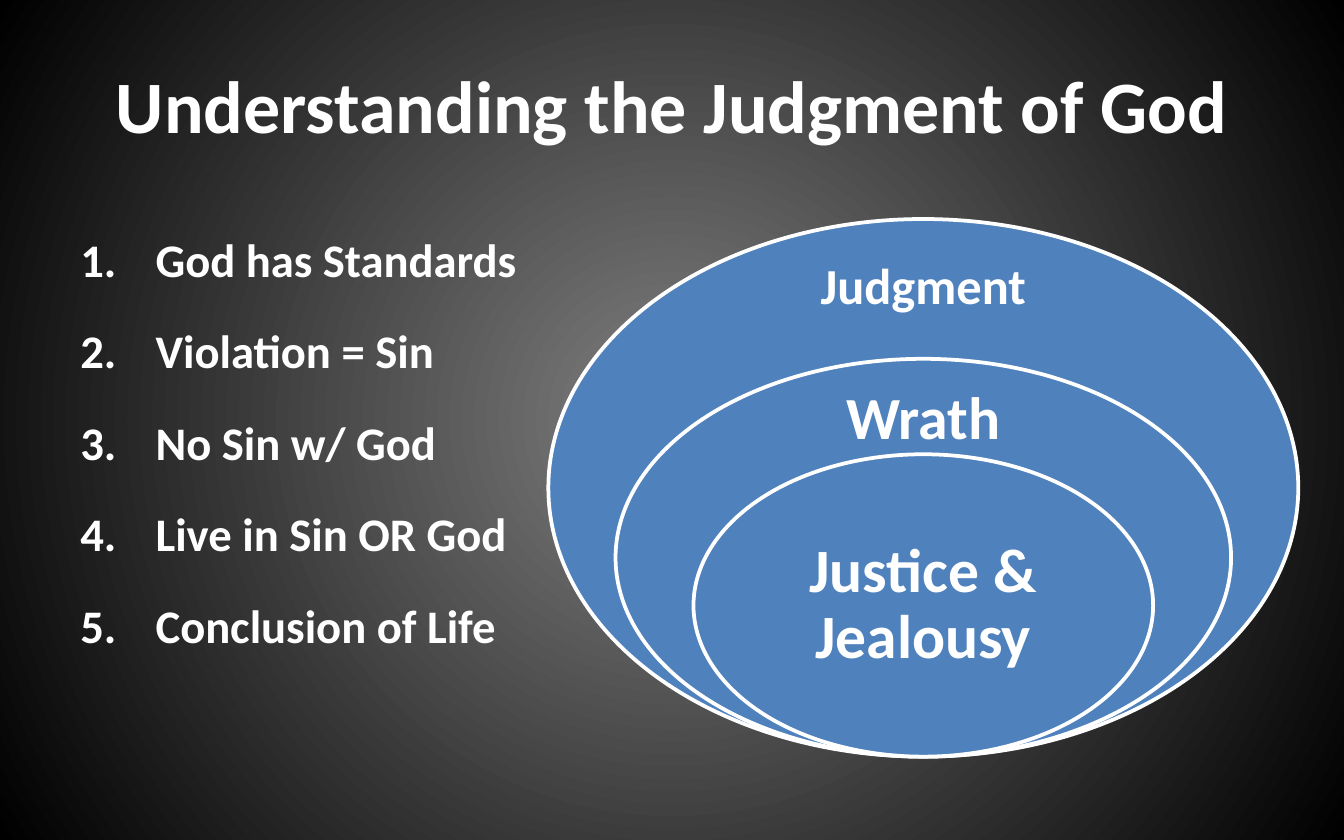
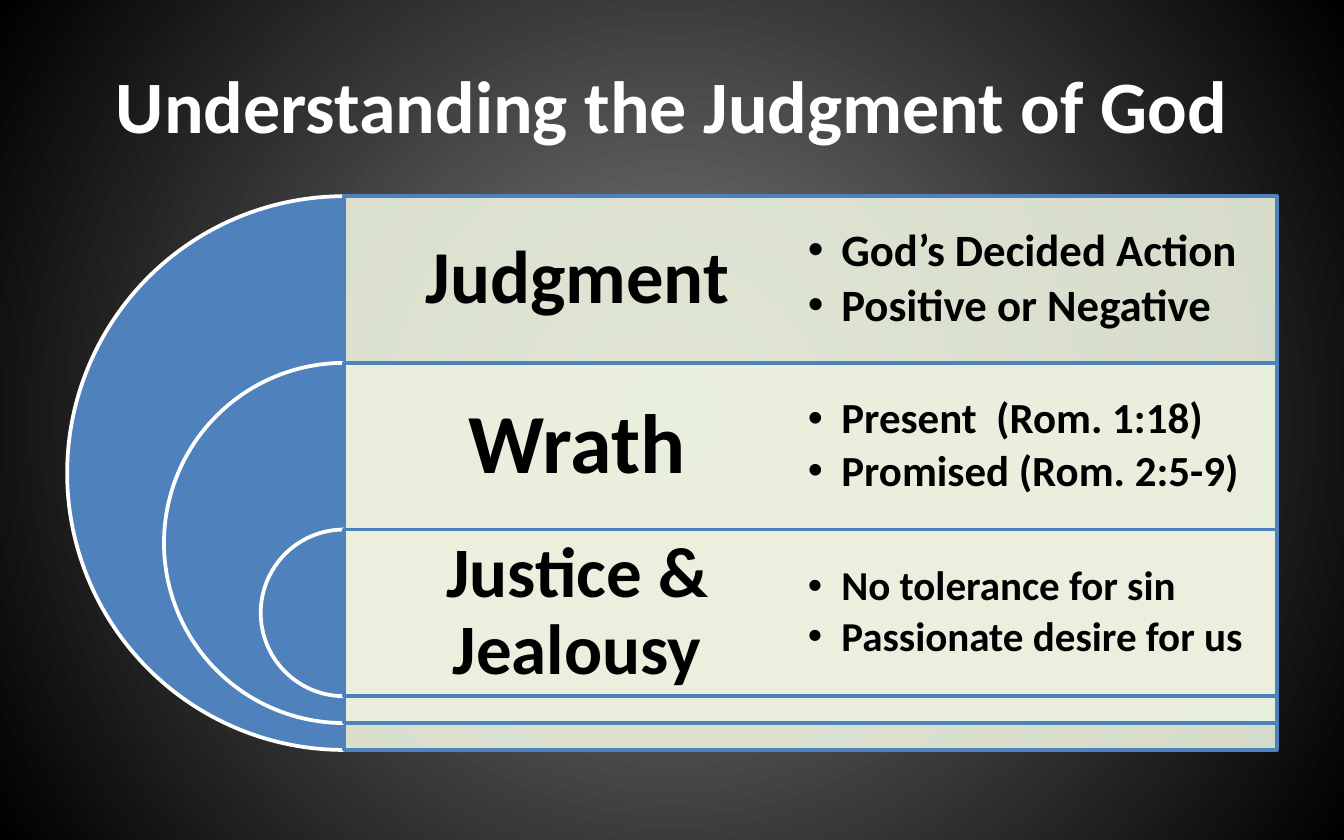
from lxml import etree
from pptx import Presentation
from pptx.dml.color import RGBColor
from pptx.enum.shapes import MSO_SHAPE
from pptx.enum.text import MSO_ANCHOR, PP_ALIGN
from pptx.oxml.ns import qn
from pptx.util import Inches, Pt

WHITE = RGBColor(0xFF, 0xFF, 0xFF)
BLACK = RGBColor(0x00, 0x00, 0x00)
GRAY = RGBColor(0x7F, 0x7F, 0x7F)
BLUE = RGBColor(0x4F, 0x81, 0xBD)
PALE_GREEN = RGBColor(0xEB, 0xF1, 0xDE)

OVAL, PIE, RECTANGLE = MSO_SHAPE.OVAL, MSO_SHAPE.PIE, MSO_SHAPE.RECTANGLE
TOP, MIDDLE, BOTTOM = MSO_ANCHOR.TOP, MSO_ANCHOR.MIDDLE, MSO_ANCHOR.BOTTOM
LEFT, CENTER = PP_ALIGN.LEFT, PP_ALIGN.CENTER

FONT = "Calibri"
TITLE = "Understanding the Judgment of God"


def add_filled_shape(slide, kind, box, fill_color, line_color):
    shape = slide.shapes.add_shape(kind, *[Inches(value) for value in box])
    shape.shadow.inherit = False
    shape.fill.solid()
    shape.fill.fore_color.rgb = fill_color
    shape.line.color.rgb = line_color
    shape.line.width = Pt(2)
    return shape


def write_text(shape, lines, size, color, anchor=MIDDLE, margins=(0.1, 0.05, 0.1, 0.05),
               bullet=None, indent=0, paragraph_format=None):
    """Fill a shape with bold paragraphs; bullet is a (tag, attributes) pair."""
    frame = shape.text_frame
    frame.word_wrap = True
    frame.vertical_anchor = anchor
    for side, margin in zip(("left", "top", "right", "bottom"), margins):
        setattr(frame, f"margin_{side}", Inches(margin))
    for index, line in enumerate(lines):
        paragraph = frame.paragraphs[0] if index == 0 else frame.add_paragraph()
        paragraph.text = line
        if bullet:
            tag, attributes = bullet
            properties = paragraph._p.get_or_add_pPr()
            properties.set("marL", str(Inches(indent)))
            properties.set("indent", str(-Inches(indent)))
            etree.SubElement(properties, qn("a:buFont"), typeface="Arial" if tag == "a:buChar" else "+mj-lt")
            etree.SubElement(properties, qn(tag), **attributes)
        for name, value in (paragraph_format or {}).items():
            if not (name == "space_before" and index == 0):
                setattr(paragraph, name, value)
        font_format = {"name": FONT, "size": Pt(size), "bold": True}
        for name, value in font_format.items():
            setattr(paragraph.runs[0].font, name, value)
        paragraph.runs[0].font.color.rgb = color


presentation = Presentation()
presentation.slide_width = Inches(10)
presentation.slide_height = Inches(6.25)

# Shared background: a radial gradient on the master
master = presentation.slide_master
background_fill = master.background.fill
background_fill.gradient()
for stop, color, position in zip(background_fill.gradient_stops, (GRAY, BLACK), (0, 1)):
    stop.color.rgb = color
    stop.position = position
gradient = master.element.find(".//" + qn("a:gradFill"))
gradient.remove(gradient.find(qn("a:lin")))
radial_path = etree.SubElement(gradient, qn("a:path"), path="circle")
etree.SubElement(radial_path, qn("a:fillToRect"), l="50000", t="50000", r="50000", b="50000")

# Both slides carry the same title
blank_layout = presentation.slide_layouts[6]
slides = [presentation.slides.add_slide(blank_layout) for _ in range(2)]
for slide in slides:
    title = slide.shapes.add_textbox(Inches(0.5), Inches(0.25), Inches(9), Inches(1.04))
    write_text(title, [TITLE], 39.6, WHITE, paragraph_format={"alignment": CENTER})
overview_slide, detail_slide = slides
label_format = {"alignment": CENTER, "line_spacing": 0.9}

# Slide 1: nested ovals sharing a centre line and a bottom edge
OVAL_CENTER, OVAL_BOTTOM = 6.87, 5.63
ovals = [
    # label, width, height, size, anchor, text margins
    ("Judgment", 5.58, 4, 27, BOTTOM, (0, 0, 0, 2.7)),
    ("Wrath", 4.58, 2.96, 32, MIDDLE, (0, 0, 0, 2.04)),
    ("Justice & Jealousy", 3.42, 2.25, 33, MIDDLE, (0.25, 0.49, 0.25, 0.49)),
]
for label, width, height, size, anchor, margins in ovals:
    box = (OVAL_CENTER - width / 2, OVAL_BOTTOM - height, width, height)
    oval = add_filled_shape(overview_slide, OVAL, box, BLUE, WHITE)
    write_text(oval, [label], size, WHITE, anchor, margins, paragraph_format=label_format)

# Slide 1: numbered list
points = ["God has Standards", "Violation = Sin", "No Sin w/ God",
          "Live in Sin OR God", "Conclusion of Life"]
numbered_list = overview_slide.shapes.add_textbox(Inches(0.5), Inches(1.46), Inches(3.67), Inches(4.42))
write_text(numbered_list, points, 25, WHITE, TOP,
           bullet=("a:buAutoNum", {"type": "arabicPeriod"}), indent=0.56,
           paragraph_format={"alignment": LEFT, "line_spacing": 1.5, "space_before": Pt(4)})

# Slide 2: half discs, each with a band reaching to the right edge
BAND_LEFT, BAND_WIDTH, FIRST_TOP, ROW_HEIGHT = 2.56, 6.94, 1.46, 1.24
DETAIL_WIDTH = 3.58
rows = [
    # label, label size, details, detail size
    ("Judgment", 40, ["God’s Decided Action", "Positive or Negative"], 24),
    ("Wrath", 45, ["Present  (Rom. 1:18)", "Promised (Rom. 2:5-9)"], 23),
    ("Justice & Jealousy", 38, ["No tolerance for sin", "Passionate desire for us"], 22),
]
for index, (label, label_size, details, detail_size) in enumerate(rows):
    top = FIRST_TOP + index * ROW_HEIGHT
    diameter = 4.12 - 1.44 * index
    disc_box = (BAND_LEFT - diameter / 2, top, diameter, diameter)
    disc = add_filled_shape(detail_slide, PIE, disc_box, BLUE, WHITE)
    disc.adjustments[0], disc.adjustments[1] = 54, 162

    band = add_filled_shape(detail_slide, RECTANGLE, (BAND_LEFT, top, BAND_WIDTH, diameter),
                            PALE_GREEN, BLUE)
    band_color = band._element.spPr.find(qn("a:solidFill"))[0]
    etree.SubElement(band_color, qn("a:alpha"), val="90000")
    write_text(band, [label], label_size, BLACK,
               margins=(0.13, 0.13, 3.6, diameter - ROW_HEIGHT + 0.13),
               paragraph_format=label_format)

# Slide 2: bulleted details on top of the bands
for index, (label, label_size, details, detail_size) in enumerate(rows):
    detail_box = detail_slide.shapes.add_textbox(
        Inches(BAND_LEFT + BAND_WIDTH - DETAIL_WIDTH), Inches(FIRST_TOP + index * ROW_HEIGHT),
        Inches(DETAIL_WIDTH), Inches(ROW_HEIGHT))
    write_text(detail_box, details, detail_size, BLACK, margins=(0.09,) * 4,
               bullet=("a:buChar", {"char": "•"}), indent=0.25,
               paragraph_format={"alignment": LEFT, "line_spacing": 0.9,
                                 "space_after": Pt(detail_size * 0.15)})

presentation.save("out.pptx")
